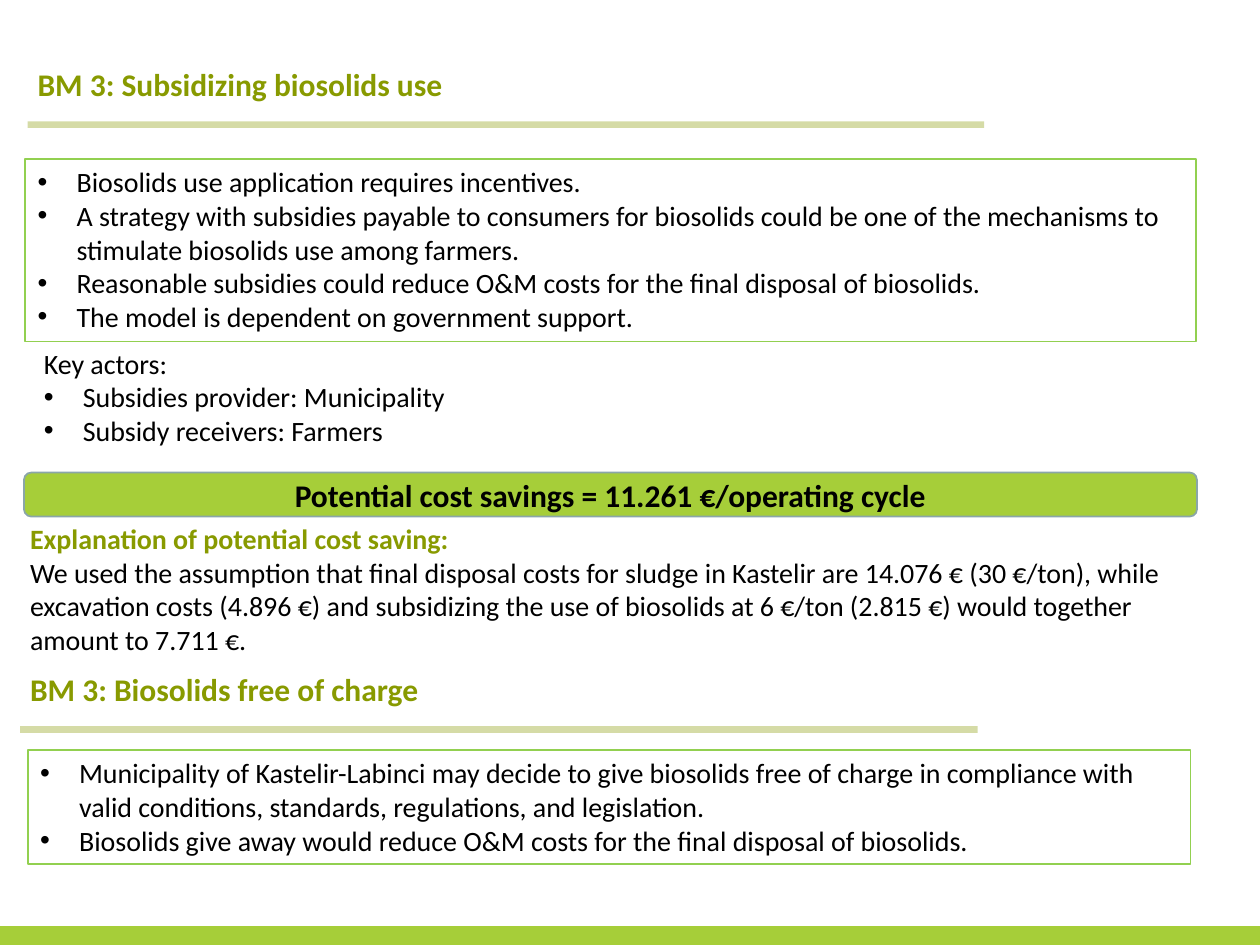
import pptx
import pptx.dml.color
import pptx.enum.shapes
import pptx.enum.text
import pptx.oxml.ns
import pptx.util
import lxml.etree

Inches = pptx.util.Inches
RGBColor = pptx.dml.color.RGBColor
SHAPES = pptx.enum.shapes.MSO_SHAPE
ALIGN = pptx.enum.text.PP_ALIGN
qn = pptx.oxml.ns.qn

LIME = RGBColor(0xA6, 0xCE, 0x39)
OLIVE = RGBColor(0x88, 0x9A, 0x00)
GREEN = RGBColor(0x92, 0xD0, 0x50)
GREY_BLUE = RGBColor(0x8A, 0xA6, 0xA8)
BLACK = RGBColor(0, 0, 0)
WHITE = RGBColor(0xFF, 0xFF, 0xFF)

presentation = pptx.Presentation()
presentation.slide_width = Inches(10)
presentation.slide_height = Inches(7.5)
slide = presentation.slides.add_slide(presentation.slide_layouts[6])


def add_box(left, top, width, height, kind=None, fill=None, line=None):
    """Add a text box, or a filled preset shape when a kind is given."""
    position = [Inches(value) for value in (left, top, width, height)]
    if kind is None:
        shape = slide.shapes.add_textbox(*position)
    else:
        shape = slide.shapes.add_shape(kind, *position)
        shape.shadow.inherit = False
        shape.fill.solid()
        shape.fill.fore_color.rgb = fill
        if line is None:
            shape.line.fill.background()
        else:
            shape.line.color.rgb = line
            shape.line.width = pptx.util.Pt(1)
    shape.text_frame.word_wrap = True
    shape.text_frame.vertical_anchor = pptx.enum.text.MSO_ANCHOR.TOP
    return shape


def write(shape, text, size=16, color=BLACK, bold=False, bullet=False, align=ALIGN.LEFT):
    """Write a paragraph into the shape, after any text already there."""
    frame = shape.text_frame
    paragraph = frame.add_paragraph() if frame.text else frame.paragraphs[0]
    paragraph.alignment = align
    if bullet:
        properties = paragraph._p.get_or_add_pPr()
        properties.set("marL", str(Inches(0.31)))
        properties.set("indent", str(-Inches(0.31)))
        lxml.etree.SubElement(properties, qn("a:buFont")).set("typeface", "Arial")
        lxml.etree.SubElement(properties, qn("a:buChar")).set("char", "•")
    run = paragraph.add_run()
    run.text = text
    run.font.name = "Calibri"
    run.font.size = pptx.util.Pt(size)
    run.font.bold = bold
    run.font.color.rgb = color


# Footer band
add_box(0, 7.35, 10, 0.15, SHAPES.RECTANGLE, LIME)

# Section headings with translucent rules
headings = [
    ("BM 3: Subsidizing biosolids use", 0.2, 0.47, 0.22, 7.81),
    ("BM 3: Biosolids free of charge", 0.14, 5.27, 0.16, 7.76),
]
for text, left, top, rule_start, rule_end in headings:
    rule_y = Inches(top + 0.52)
    rule = slide.shapes.add_connector(
        pptx.enum.shapes.MSO_CONNECTOR.STRAIGHT,
        Inches(rule_start), rule_y, Inches(rule_end), rule_y)
    rule.line.color.rgb = OLIVE
    rule.line.width = pptx.util.Pt(3.75)
    color = rule.line._ln.find(".//" + qn("a:srgbClr"))
    lxml.etree.SubElement(color, qn("a:alpha")).set("val", "35000")
    lxml.etree.SubElement(rule._element.spPr, qn("a:effectLst"))
    write(add_box(left, top, 9.69, 0.4), text, size=18, color=OLIVE, bold=True)

# Framed bullet lists
bullet_lists = [
    ((0.2, 1.26, 9.29, 1.45), [
        "Biosolids use application requires incentives.",
        "A strategy with subsidies payable to consumers for biosolids could be one of "
        "the mechanisms to stimulate biosolids use among farmers.",
        "Reasonable subsidies could reduce O&M costs for the final disposal of biosolids.",
        "The model is dependent on government support.",
    ]),
    ((0.22, 5.95, 9.23, 0.91), [
        "Municipality of Kastelir-Labinci may decide to give biosolids free of charge in "
        "compliance with valid conditions, standards, regulations, and legislation.",
        "Biosolids give away would reduce O&M costs for the final disposal of biosolids.",
    ]),
]
for position, items in bullet_lists:
    frame_box = add_box(*position, SHAPES.RECTANGLE, WHITE, GREEN)
    for item in items:
        write(frame_box, item, bullet=True)

# Key actors
actors = add_box(0.25, 2.7, 7.24, 0.91)
write(actors, "Key actors:")
for actor in ("Subsidies provider: Municipality", "Subsidy receivers: Farmers"):
    write(actors, actor, bullet=True)

# Savings banner
banner = add_box(0.19, 3.75, 9.31, 0.35, SHAPES.ROUNDED_RECTANGLE, LIME, GREY_BLUE)
banner.text_frame.vertical_anchor = pptx.enum.text.MSO_ANCHOR.MIDDLE
write(banner, "Potential cost savings = 11.261 €/operating cycle",
      size=18, bold=True, align=ALIGN.CENTER)

# Explanation
explanation = add_box(0.14, 4.09, 9.31, 1.18)
write(explanation, "Explanation of potential cost saving:",
      color=OLIVE, bold=True, align=ALIGN.JUSTIFY)
write(explanation,
      "We used the assumption that final disposal costs for sludge in Kastelir are "
      "14.076 € (30 €/ton), while excavation costs (4.896 €) and subsidizing the use of "
      "biosolids at 6 €/ton (2.815 €) would together amount to 7.711 €.")

presentation.save("out.pptx")
